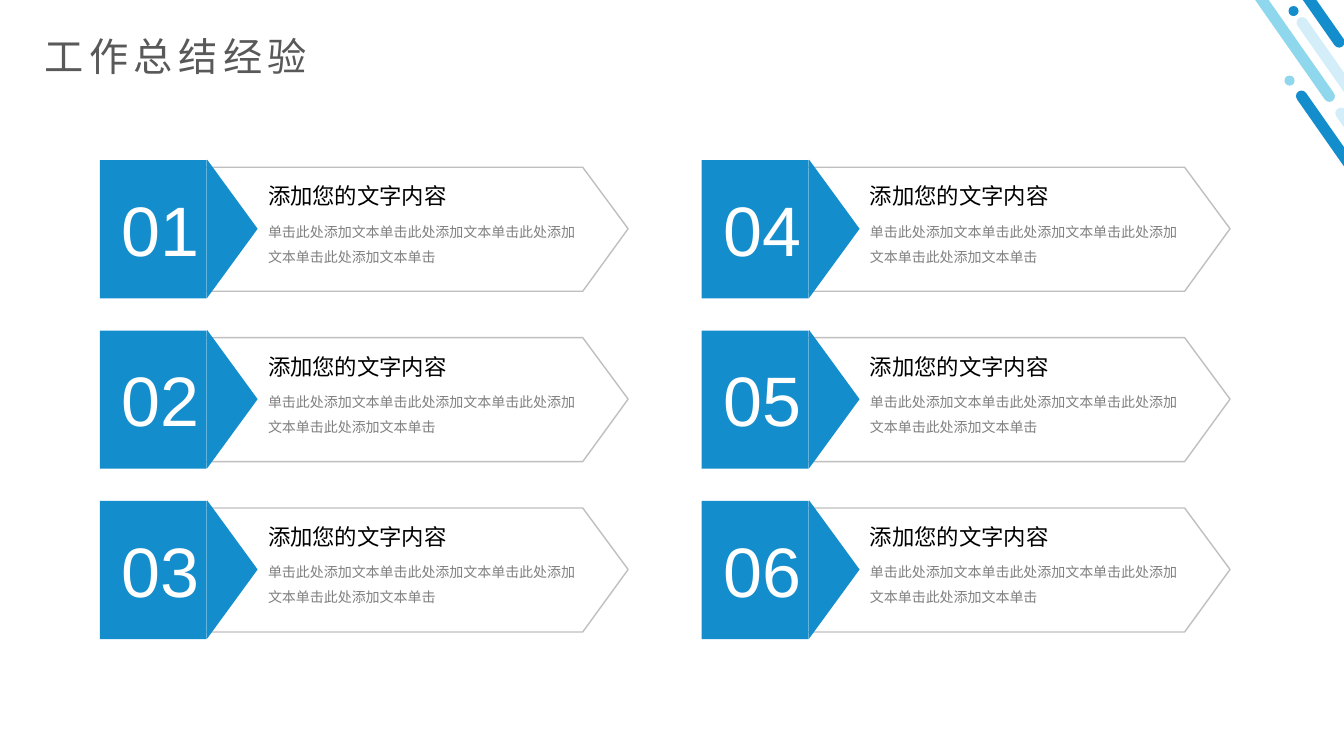
"""Build the work summary slide with six numbered arrow cards."""
from lxml.etree import SubElement
from pptx import Presentation
from pptx.dml.color import RGBColor
from pptx.enum.shapes import MSO_SHAPE as SHAPE
from pptx.enum.text import MSO_ANCHOR as ANCHOR, MSO_AUTO_SIZE as AUTO_SIZE, PP_ALIGN as ALIGN
from pptx.oxml.ns import qn
from pptx.util import Pt

PX = 9144
BLUE = RGBColor(0x13, 0x8D, 0xCC)
SKY = RGBColor(0x8F, 0xD7, 0xED)
PALE = RGBColor(0xD3, 0xEE, 0xF9)
WHITE = RGBColor(0xFF, 0xFF, 0xFF)
BLACK = RGBColor(0, 0, 0)
TITLE_GRAY = RGBColor(0x59, 0x59, 0x59)
BODY_GRAY = RGBColor(0x80, 0x80, 0x80)
LINE_GRAY = RGBColor(0xBF, 0xBF, 0xBF)
CJK = "Noto Sans CJK SC"

presentation = Presentation()
presentation.slide_width = 1333 * PX
presentation.slide_height = 750 * PX
slide = presentation.slides.add_slide(presentation.slide_layouts[5])
shapes = slide.shapes


def add_solid(kind, left, top, width, height, color, rotation=0):
    shape = shapes.add_shape(kind, left * PX, top * PX, width * PX, height * PX)
    shape.rotation = rotation
    shape.shadow.inherit = False
    shape.fill.solid()
    shape.fill.fore_color.rgb = color
    shape.line.fill.background()
    return shape


def write(text, left, top, width, height, size, color, font=CJK, align=ALIGN.LEFT,
          wrap=True, line_spacing=None, space_before=None, tracking=None, box=None):
    if box is None:
        box = shapes.add_textbox(0, 0, PX, PX)
    box.left, box.top, box.width, box.height = left * PX, top * PX, width * PX, height * PX
    frame = box.text_frame
    frame.word_wrap = wrap
    frame.auto_size = AUTO_SIZE.NONE
    frame.vertical_anchor = ANCHOR.TOP
    paragraph = frame.paragraphs[0]
    paragraph.alignment = align
    paragraph.line_spacing = line_spacing
    paragraph.space_before = space_before
    run = paragraph.add_run()
    run.text = text
    run.font.size = Pt(size)
    run.font.color.rgb = color
    run.font.name = font
    properties = run._r.get_or_add_rPr()
    SubElement(properties, qn("a:ea")).set("typeface", font)
    if tracking:
        properties.set("spc", str(tracking * 100))


bars = [
    (1345, 71, 219, BLUE),
    (1384, 88, 219, PALE),
    (1237, -151, 276, SKY),
    (1362, -7, 276, PALE),
    (1263, -153, 219, BLUE),
]
for left, top, length, color in bars:
    bar = add_solid(SHAPE.ROUNDED_RECTANGLE, left, top, 11, length, color, rotation=325)
    bar.adjustments[0] = 0.5
for left, top, color in [(1274, 75, SKY), (1278, 6, BLUE)]:
    add_solid(SHAPE.OVAL, left, top, 10, 10, color)

write("工作总结经验", 34, 27, 1302, 57, 28, TITLE_GRAY, tracking=4, box=shapes.title)

for index in range(6):
    column, row = divmod(index, 3)
    x, y = 99 + 597 * column, 159 + 169 * row

    builder = shapes.build_freeform((x + 30) * PX, (y + 7) * PX, scale=1.0)
    outline = [(479, 7), (524, 68), (479, 130), (30, 130)]
    builder.add_line_segments([((x + dx) * PX, (y + dy) * PX) for dx, dy in outline])
    arrow = builder.convert_to_shape()
    arrow.shadow.inherit = False
    arrow.fill.solid()
    arrow.fill.fore_color.rgb = WHITE
    arrow.line.color.rgb = LINE_GRAY
    arrow.line.width = Pt(1)

    add_solid(SHAPE.RECTANGLE, x, y, 106, 137, BLUE)
    add_solid(SHAPE.ISOSCELES_TRIANGLE, x + 63, y + 43, 137, 50, BLUE, rotation=90)
    write("单击此处添加文本单击此处添加文本单击此处添加文本单击此处添加文本单击",
          x + 157, y + 49, 325, 58, 10, BODY_GRAY, line_spacing=1.5, space_before=Pt(13.3))
    write("添加您的文字内容", x + 157, y + 17, 198, 37, 16, BLACK, wrap=False)
    write(f"{index + 1:02}", x, y + 21, 120, 94, 50, WHITE, font="Arial", align=ALIGN.CENTER)

presentation.save("out.pptx")
